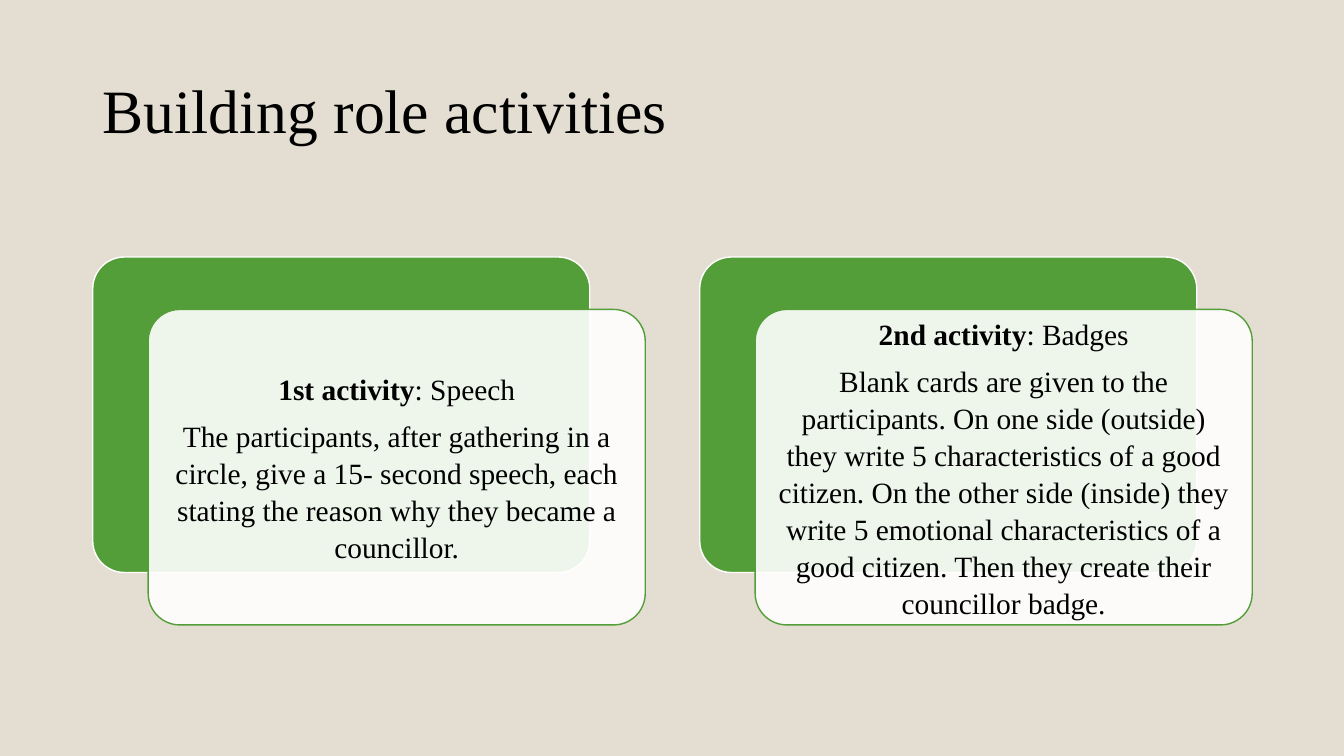
import pptx
import pptx.util
import pptx.dml.color
import pptx.enum.shapes
import pptx.enum.text
import lxml.etree

Inch = pptx.util.Inches
Point = pptx.util.Pt
theme = {
    "font": "Times New Roman",
    "back": "E3DED1", "green": "549E39", "white": "FFFFFF", "ink": "000000",
    "title": 44, "body": 21,
}
hue = {k: pptx.dml.color.RGBColor.from_string(theme[k])
       for k in ("back", "green", "white", "ink")}
cards = [
    ("1st activity", ": Speech",
     "The participants, after gathering in a circle, give a 15- second speech, "
     "each stating the reason why they became a councillor."),
    ("2nd activity", ": Badges",
     "Blank cards are given to the participants. On one side (outside) they write "
     "5 characteristics of a good citizen. On the other side (inside) they write "
     "5 emotional characteristics of a good citizen. Then they create their "
     "councillor badge."),
]

deck = pptx.Presentation()
deck.slide_width, deck.slide_height = Inch(13.33), Inch(7.5)
slide = deck.slides.add_slide(deck.slide_layouts[6])
slide.background.fill.solid()
slide.background.fill.fore_color.rgb = hue["back"]

left, top = 0.92, 2.55
wide, high = 4.93, 3.13
pitch = 6.02
step_x, step_y = 0.55, 0.52
pad = 0.09


def add_panel(x, y, fill, line):
    panel = slide.shapes.add_shape(
        pptx.enum.shapes.MSO_SHAPE.ROUNDED_RECTANGLE,
        Inch(x), Inch(y), Inch(wide), Inch(high))
    panel.adjustments[0] = 0.1
    panel.shadow.inherit = False
    panel.fill.solid()
    panel.fill.fore_color.rgb = hue[fill]
    panel.line.color.rgb = hue[line]
    panel.line.width = Point(1)
    return panel


def add_text(x, y, w, h, lines, size):
    box = slide.shapes.add_textbox(Inch(x), Inch(y), Inch(w), Inch(h))
    frame = box.text_frame
    frame.word_wrap = True
    frame.vertical_anchor = pptx.enum.text.MSO_ANCHOR.MIDDLE
    frame.text = "\n".join(lines)
    for para in frame.paragraphs:
        para.font.size = Point(size)
        for run in para.runs:
            run.font.name = theme["font"]
            run.font.size = Point(size)
            run.font.color.rgb = hue["ink"]
    return frame


title = add_text(left, 0.4, 11.5, 1.45, ["Building role activities"], theme["title"])
title.paragraphs[0].line_spacing = 0.9

for col, (name, topic, body) in enumerate(cards):
    x = left + col * pitch
    add_panel(x, top, "green", "white")
    front = add_panel(x + step_x, top + step_y, "white", "green")
    tint = front.fill._xPr.find(".//" + pptx.oxml.ns.qn("a:srgbClr"))
    lxml.etree.SubElement(tint, pptx.oxml.ns.qn("a:alpha")).set("val", "90000")

    frame = add_text(x + step_x + pad, top + step_y + pad,
                     wide - 2 * pad, high - 2 * pad, [name, body], theme["body"])
    frame.margin_left = frame.margin_right = Inch(pad)
    frame.margin_top = frame.margin_bottom = Inch(pad)
    for para in frame.paragraphs:
        para.alignment = pptx.enum.text.PP_ALIGN.CENTER
        para.line_spacing = 1.05
        para.space_after = Point(7)
    head = frame.paragraphs[0]
    head.runs[0].font.bold = True
    tail = head.add_run()
    tail.text = topic
    tail.font.name = theme["font"]
    tail.font.size = Point(theme["body"])
    tail.font.color.rgb = hue["ink"]

deck.save("out.pptx")
